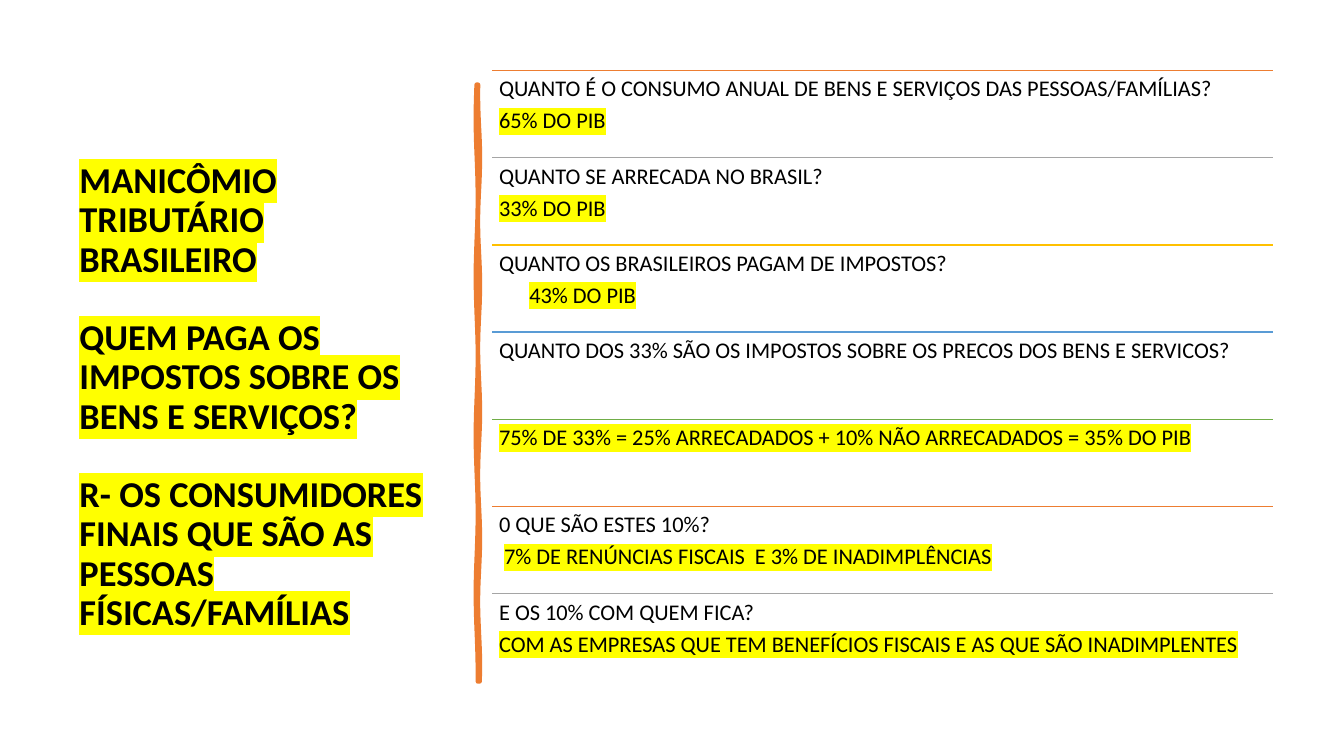
from math import sin
from lxml.etree import SubElement as Sub
from pptx import Presentation
from pptx.dml.color import RGBColor
from pptx.enum.shapes import MSO_CONNECTOR as Conn
from pptx.enum.text import MSO_ANCHOR as Anchor
from pptx.oxml.ns import qn
from pptx.util import Inches, Pt


def color(code):
    return RGBColor.from_string(code)


def write(para, text, size, bold, mark):
    """Add one run of text, highlighted when mark is true."""
    para.line_spacing = 0.9
    run = para.add_run()
    run.text = text
    for key, val in {"name": "Calibri", "size": Pt(size), "bold": bold}.items():
        setattr(run.font, key, val)
    run.font.color.rgb = color("000000")
    if mark:
        props = run.font._element
        light = Sub(props, qn("a:highlight"))
        Sub(light, qn("a:srgbClr"), val="FFFF00")
        props.find(qn("a:solidFill")).addnext(light)


prs = Presentation()
prs.slide_width, prs.slide_height = Inches(13.33), Inches(7.5)
slide = prs.slides.add_slide(prs.slide_layouts[6])
shapes = slide.shapes

# Title
title = [
    "MANICÔMIO TRIBUTÁRIO BRASILEIRO",
    "QUEM PAGA OS IMPOSTOS SOBRE OS BENS E SERVIÇOS?",
    "R- OS CONSUMIDORES FINAIS QUE SÃO AS PESSOAS FÍSICAS/FAMÍLIAS",
]
box = shapes.add_textbox(Inches(0.69), Inches(0.89), Inches(3.74), Inches(6.11))
frame = box.text_frame
frame.word_wrap = True
frame.vertical_anchor = Anchor.MIDDLE
for i, text in enumerate(title):
    para = frame.add_paragraph() if i else frame.paragraphs[0]
    if i:
        para.space_before = Pt(28)
    write(para, text, 26, True, True)

# Hand-drawn divider: two wavy edges
top, tall, steps = 0.84, 5.92, 60
ys = [top + tall * i / steps for i in range(steps + 1)]
right = [(4.75 + 0.01 * sin(5 * y), y) for y in ys]
left = [(4.73 + 0.01 * sin(4 * y), y) for y in reversed(ys)]
edge = [(Inches(x), Inches(y)) for x, y in right + left]
pen = shapes.build_freeform(*edge[0])
pen.add_line_segments(edge[1:], close=True)
brush = pen.convert_to_shape()
brush.shadow.inherit = False
brush.fill.solid()
brush.fill.fore_color.rgb = color("ED7D31")
brush.line.color.rgb = color("ED7D31")
brush.line.width = Pt(3.25)
Sub(brush.line._ln, qn("a:round"))

# Questions: rule colour, question, answer, answer indent
rows = [
    ("ED7D31", "QUANTO É O CONSUMO ANUAL DE BENS E SERVIÇOS DAS PESSOAS/FAMÍLIAS?",
     "65% DO PIB", 0),
    ("A5A5A5", "QUANTO SE ARRECADA NO BRASIL?", "33% DO PIB", 0),
    ("FFC000", "QUANTO OS BRASILEIROS PAGAM DE IMPOSTOS?", "43% DO PIB", 0.3),
    ("599BD5", "QUANTO DOS 33% SÃO OS IMPOSTOS SOBRE OS PRECOS DOS BENS E SERVICOS?",
     "", 0),
    ("70AD47", "",
     "75% DE 33% = 25% ARRECADADOS + 10% NÃO ARRECADADOS = 35% DO PIB", 0),
    ("ED7D31", "0 QUE SÃO ESTES 10%?",
     "7% DE RENÚNCIAS FISCAIS  E 3% DE INADIMPLÊNCIAS", 0.05),
    ("A5A5A5", "E OS 10% COM QUEM FICA?",
     "COM AS EMPRESAS QUE TEM BENEFÍCIOS FISCAIS E AS QUE SÃO INADIMPLENTES", 0),
]
x, wide = Inches(4.88), Inches(7.75)
pitch = (5.89 - 0.7) / 6
for i, (tone, ask, reply, indent) in enumerate(rows):
    y = Inches(0.7 + i * pitch)
    rule = shapes.add_connector(Conn.STRAIGHT, x, y, x + wide, y)
    rule.line.color.rgb = color(tone)
    rule.line.width = Pt(1)
    Sub(rule._element.spPr, qn("a:effectLst"))

    frame = shapes.add_textbox(x, y, wide, Inches(0.86)).text_frame
    frame.word_wrap = True
    for side in ("left", "top", "right", "bottom"):
        setattr(frame, "margin_" + side, Inches(0.07))
    para = frame.paragraphs[0]
    if ask:
        write(para, ask, 16, False, False)
    if reply:
        if ask:
            para = frame.add_paragraph()
            para.space_before = Pt(5.6)
        if indent:
            para._p.get_or_add_pPr().set("marL", str(Inches(indent)))
        write(para, reply, 16, False, True)

prs.save("out.pptx")
